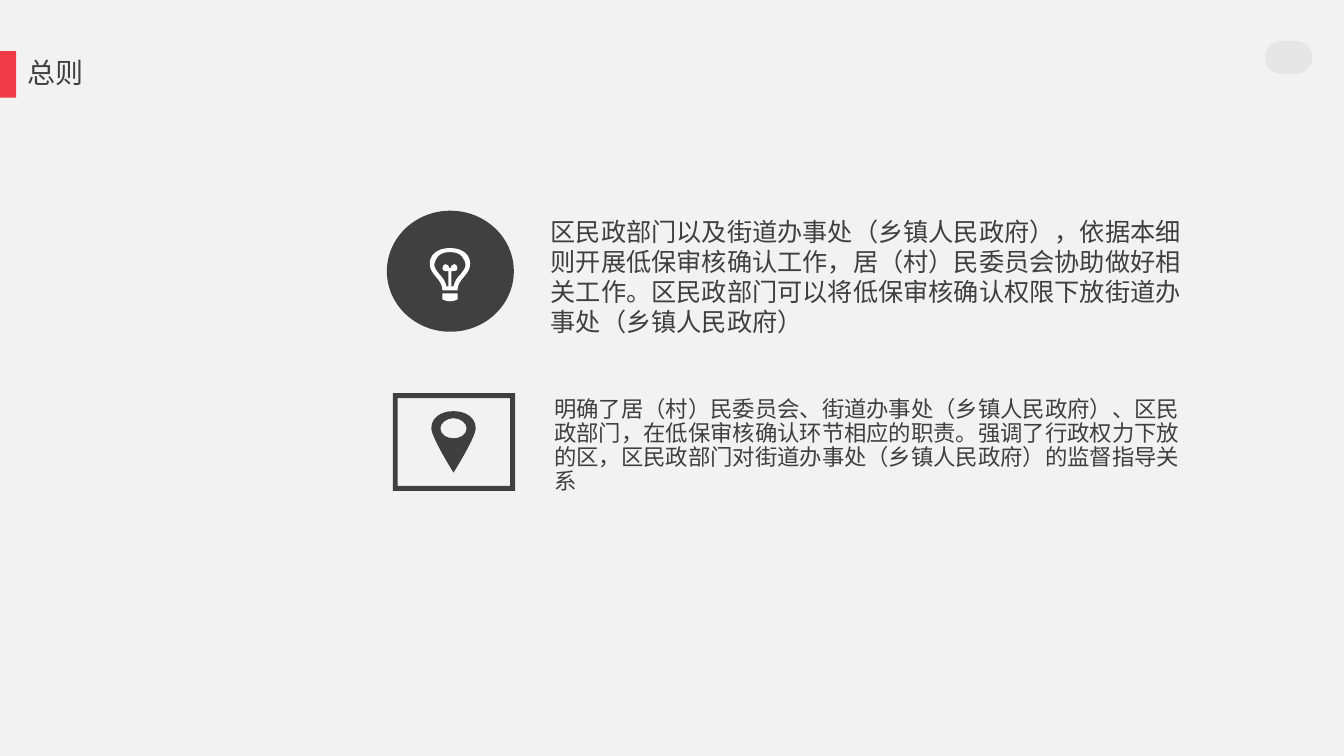
import pptx
import pptx.util
import pptx.dml.color
import pptx.enum.shapes
import pptx.enum.text
import lxml.etree

Cm = pptx.util.Cm
Pt = pptx.util.Pt
qn = pptx.oxml.ns.qn
KIND = pptx.enum.shapes.MSO_SHAPE
ANCHOR = pptx.enum.text.MSO_ANCHOR
DARK = "3F3F3F"
CJK = "Noto Sans CJK SC"
UNIT = Cm(2.54) / 100

DUTY = "区民政部门以及街道办事处（乡镇人民政府），依据本细则开展低保审核确认工作，居（村）民委员会协助做好相关工作。区民政部门可以将低保审核确认权限下放街道办事处（乡镇人民政府）"
ROLE = "明确了居（村）民委员会、街道办事处（乡镇人民政府）、区民政部门，在低保审核确认环节相应的职责。强调了行政权力下放的区，区民政部门对街道办事处（乡镇人民政府）的监督指导关系"

BULB = [
    [(0, 0), (14, 0, 20, 8, 20, 15), (20.5, 27, 7.5, 30, 7.5, 42)],
    [(0, 4), (12.5, 4, 14.5, 12, 15.5, 16), (15.5, 20, 13.5, 22, 10.5, 26),
     (7.5, 29, 4.5, 33, 3.5, 38), (1.5, 38), (1.5, 23), (4.5, 23),
     (6, 23, 7.5, 21.5, 7.5, 20), (7.5, 18, 6, 16, 4.5, 16),
     (2.5, 16, 0.5, 18, 0.5, 20)],
]
BASE = [[(0, 0), (7.5, 0), (7.5, 6), (5.5, 7, 3.5, 8, 0, 8)]]
PIN = [
    [(0, 0), (13, 0, 22, 7, 22, 17), (22, 26, 0, 61, 0, 61)],
    [(0, 7), (7, 7, 13, 12, 13, 17), (13, 23, 7, 27, 0, 27)],
]


def paint(hue):
    """Return the colour for a hex string."""
    return pptx.dml.color.RGBColor.from_string(hue)


def apply(item, looks):
    """Set each attribute of the item from a dict."""
    for name, value in looks.items():
        setattr(item, name, value)


def coat(shape, hue):
    """Give a shape a flat fill without line or shadow."""
    shape.shadow.inherit = False
    shape.fill.solid()
    shape.fill.fore_color.rgb = paint(hue)
    shape.line.fill.background()
    return shape


def block(slide, kind, box, hue):
    """Add a flat preset shape in a box given in centimetres."""
    return coat(slide.shapes.add_shape(kind, *map(Cm, box)), hue)


def write(shape, text, face, size, hue, frame, para):
    """Fill a text shape with one formatted paragraph."""
    apply(shape.text_frame, {"word_wrap": True, **frame})
    line = shape.text_frame.paragraphs[0]
    apply(line, {"alignment": pptx.enum.text.PP_ALIGN.LEFT, **para})
    run = line.add_run()
    run.text = text
    apply(run.font, {"name": face, "size": Pt(size), "bold": False})
    run.font.color.rgb = paint(hue)
    east = lxml.etree.SubElement(run._r.get_or_add_rPr(), qn("a:ea"))
    east.set("typeface", CJK)


def margins(wide, high):
    """Return the four text margins in centimetres."""
    return {"margin_left": Cm(wide), "margin_right": Cm(wide),
            "margin_top": Cm(high), "margin_bottom": Cm(high)}


def pairs(part):
    """Split flat numbers into scaled points."""
    return [(x * UNIT, y * UNIT) for x, y in zip(part[::2], part[1::2])]


def mirror(half):
    """Return the points of each segment of a whole symmetric outline."""
    parts = [pairs(part) for part in half]
    back = []
    for last, part in zip(parts, parts[1:]):
        dots = [last[-1]] + part[:-1]
        back.insert(0, [(-x, y) for x, y in reversed(dots)])
    x, y = parts[-1][-1]
    bridge = [[(-x, y)]] if x else []
    return parts + bridge + back


def icon(slide, halves, left, top, hue):
    """Draw a symmetric icon with curves, hung from the top of its axis."""
    rings = [mirror(half) for half in halves]
    pen = slide.shapes.build_freeform(*rings[0][0][0])
    for index, ring in enumerate(rings):
        if index:
            pen.move_to(*ring[0][0])
        pen.add_line_segments([dot for part in ring[1:] for dot in part], close=True)
    shape = coat(pen.convert_to_shape(Cm(left), Cm(top)), hue)
    nodes = iter(list(shape._element.iter(qn("a:lnTo"))))
    for part in (part for ring in rings for part in ring[1:]):
        first, *rest = [next(nodes) for _ in part]
        if rest:
            first.tag = qn("a:cubicBezTo")
        for node in rest:
            first.append(node[0])
            node.getparent().remove(node)


def head(slide, box):
    """Place the red bar, the title and the page pill in the top band."""
    left, top, wide, high = box
    block(slide, KIND.RECTANGLE, (left, top, 0.41, high), "F23B48")
    pill = block(slide, KIND.ROUNDED_RECTANGLE,
                 (left + wide - 1.99, top - 0.26, 1.19, 0.84), "E7E6E6")
    pill.adjustments[0] = 0.5
    title = slide.shapes.title
    apply(title, {"left": Cm(left + 0.69), "top": Cm(top),
                  "width": Cm(10.6), "height": Cm(high)})
    write(title, "总则", CJK, 20, "404040",
          {"vertical_anchor": ANCHOR.MIDDLE, **margins(0, 0)},
          {"line_spacing": 0.9, "space_before": Pt(10)})


def duty(slide, box):
    """Place the round bulb badge with its text."""
    left, top, wide, high = box
    block(slide, KIND.OVAL, (left, top, 3.2, 3.05), "404040")
    icon(slide, BULB, left + 1.59, top + 0.94, "FFFFFF")
    icon(slide, BASE, left + 1.59, top + 2.08, "FFFFFF")
    text = slide.shapes.add_textbox(Cm(left + 3.88), Cm(top), Cm(wide - 3.88), Cm(high))
    write(text, DUTY, CJK, 18, DARK, margins(0.25, 0.13), {})


def role(slide, box):
    """Place the framed pin badge with its text."""
    left, top, wide, high = box
    edge = block(slide, KIND.FRAME, (left, top, 3.08, 2.46), DARK)
    edge.adjustments[0] = 0.05
    icon(slide, PIN, left + 1.53, top + 0.45, DARK)
    text = slide.shapes.add_textbox(Cm(left + 4.07), Cm(top + 0.12),
                                    Cm(wide - 4.07), Cm(high - 0.12))
    write(text, ROLE, "Roboto", 16, DARK, margins(0, 0),
          {"line_spacing": 0.9, "space_before": Pt(7.5)})


def main():
    """Build the slide and save it."""
    deck = pptx.Presentation()
    apply(deck, {"slide_width": Cm(33.87), "slide_height": Cm(19.05)})
    slide = deck.slides.add_slide(deck.slide_layouts[5])
    slide.background.fill.solid()
    slide.background.fill.fore_color.rgb = paint("F2F2F2")
    head(slide, (0, 1.29, 33.87, 1.17))
    duty(slide, (9.75, 5.31, 20.57, 3.33))
    role(slide, (9.9, 9.91, 20.02, 5.4))
    deck.save("out.pptx")


if __name__ == "__main__":
    main()
